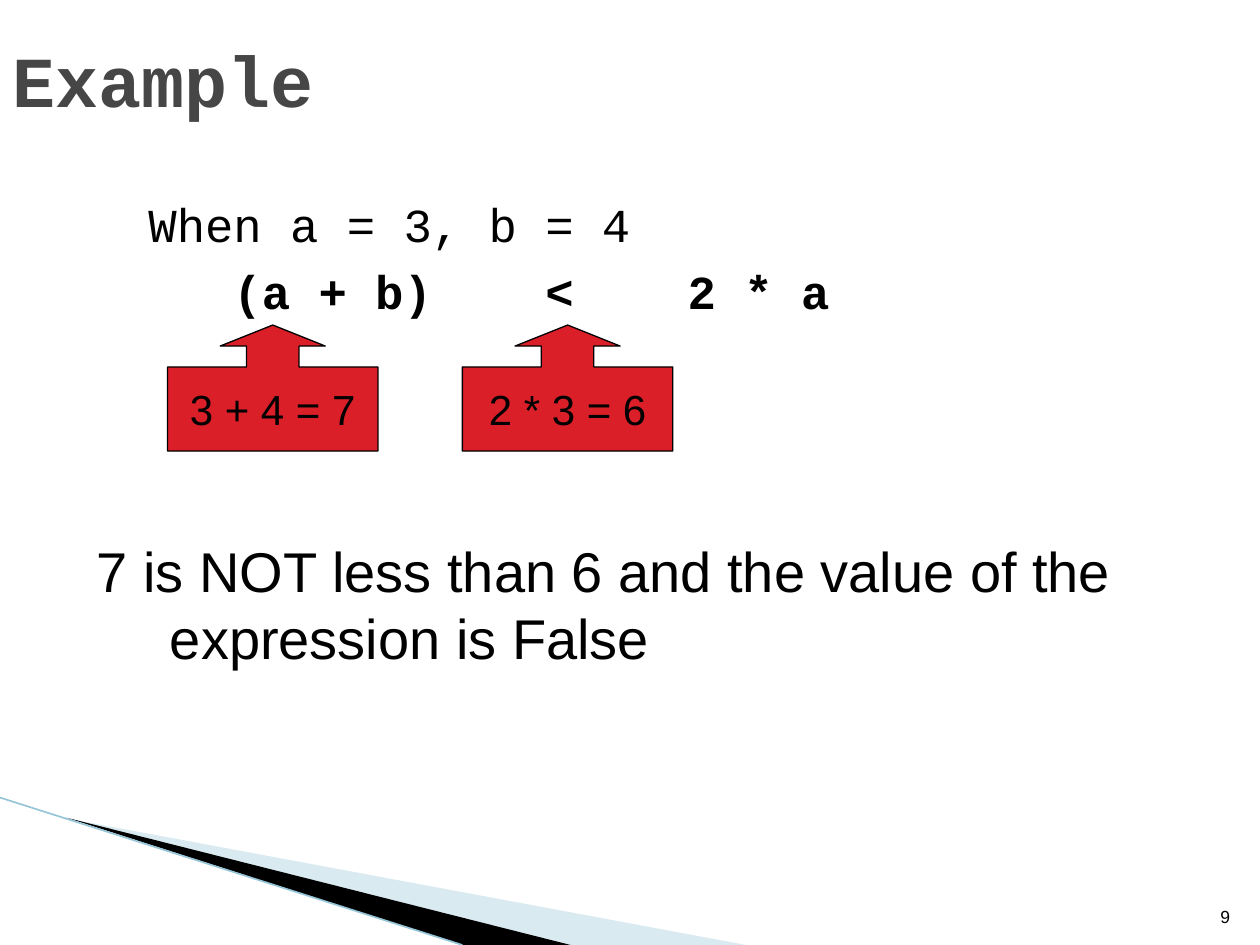
import pptx
import pptx.util
import pptx.dml.color
import pptx.enum.shapes
import pptx.enum.text
from lxml import etree

Inches, Pt = pptx.util.Inches, pptx.util.Pt
RGB = pptx.dml.color.RGBColor.from_string
ALIGN, ANCHOR = pptx.enum.text.PP_ALIGN, pptx.enum.text.MSO_ANCHOR
A = "{http://schemas.openxmlformats.org/drawingml/2006/main}"
COLORS = {"text": "000000", "title": "464646", "callout": "DA1F28",
          "wedge": "A0CBDC", "edge": "97C5D8"}


def add_text(tf, text, size=27, font="Courier New", color="text", bold=False,
             align=ALIGN.LEFT, anchor=ANCHOR.TOP, wrap=True, before=0,
             hanging=0, tabs=(), new=False):
    """Write one paragraph; new=True adds it after the existing ones."""
    tf.word_wrap, tf.vertical_anchor = wrap, anchor
    p = tf.add_paragraph() if new else tf.paragraphs[0]
    p.alignment = align
    p.space_before = Pt(before)
    pPr = p._p.get_or_add_pPr()
    if hanging:
        pPr.set("marL", str(Inches(hanging)))
        pPr.set("indent", str(-Inches(hanging)))
    if tabs:
        tab_list = etree.SubElement(pPr, A + "tabLst")
        for pos in tabs:
            etree.SubElement(tab_list, A + "tab", pos=str(Inches(pos)), algn="l")
    r = p.add_run()
    r.text = text
    r.font.name, r.font.size, r.font.bold = font, Pt(size), bold
    r.font.color.rgb = RGB(COLORS[color])


prs = pptx.Presentation()
prs.slide_width, prs.slide_height = Inches(10), Inches(7.5)
s = prs.slides.add_slide(prs.slide_layouts[6])

# Corner wedges
wedges = [("wedge", 40, [(0.55, 6.5), (5.92, 7.5), (4.53, 7.5)]),
          ("text", 100, [(0.53, 6.49), (4.53, 7.5), (3.67, 7.5)])]
for color, opacity, points in wedges:
    corners = [(Inches(x), Inches(y)) for x, y in points]
    builder = s.shapes.build_freeform(*corners[0], scale=1.0)
    builder.add_line_segments(corners[1:], close=True)
    sp = builder.convert_to_shape()
    sp.shadow.inherit = False
    sp.fill.solid()
    sp.fill.fore_color.rgb = RGB(COLORS[color])
    sp.line.fill.background()
    if opacity < 100:
        clr = sp._element.spPr.find(A + "solidFill")[0]
        etree.SubElement(clr, A + "alpha", val=str(opacity * 1000))

# Corner edge line
edge = s.shapes.add_connector(pptx.enum.shapes.MSO_CONNECTOR.STRAIGHT,
                              Inches(0), Inches(6.33), Inches(3.67), Inches(7.5))
edge.line.color.rgb = RGB(COLORS["edge"])
edge.line.width = Pt(0.95)
etree.SubElement(edge._element.spPr, A + "effectLst")

# Expression, with tab stops at the operator and the right operand
tf = s.shapes.add_textbox(Inches(1.08), Inches(1.5), Inches(8.71), Inches(1.5)).text_frame
add_text(tf, "When a = 3, b = 4")
add_text(tf, "   (a + b)\t<\t2 * a", bold=True, before=6, tabs=(3.15, 4.28), new=True)

# Slide number
tf = s.shapes.add_textbox(Inches(9.46), Inches(7.01), Inches(0.4), Inches(0.4)).text_frame
add_text(tf, "9", size=10, font="Arial", align=ALIGN.RIGHT, anchor=ANCHOR.BOTTOM)

# Title
tf = s.shapes.add_textbox(Inches(0), Inches(0), Inches(9), Inches(1.25)).text_frame
add_text(tf, "Example", size=41, color="title", bold=True, anchor=ANCHOR.MIDDLE)

# Callouts with the value of each side
for left, text in [(1.33, "3 + 4 = 7"), (3.67, "2 * 3 = 6")]:
    sp = s.shapes.add_shape(pptx.enum.shapes.MSO_SHAPE.UP_ARROW_CALLOUT,
                            Inches(left), Inches(2.58), Inches(1.67), Inches(1))
    for i, value in enumerate((0.417, 0.417, 0.167, 0.667)):
        sp.adjustments[i] = value
    sp.shadow.inherit = False
    sp.fill.solid()
    sp.fill.fore_color.rgb = RGB(COLORS["callout"])
    sp.line.color.rgb = RGB(COLORS["text"])
    sp.line.width = Pt(0.75)
    add_text(sp.text_frame, text, size=24, font="Arial", align=ALIGN.CENTER,
             anchor=ANCHOR.MIDDLE, wrap=False)

# Conclusion
tf = s.shapes.add_textbox(Inches(0.67), Inches(4.21), Inches(8.71), Inches(1.5)).text_frame
add_text(tf, "7 is NOT less than 6 and the value of the expression is False",
         size=32, font="Arial", hanging=0.58)

prs.save("out.pptx")
